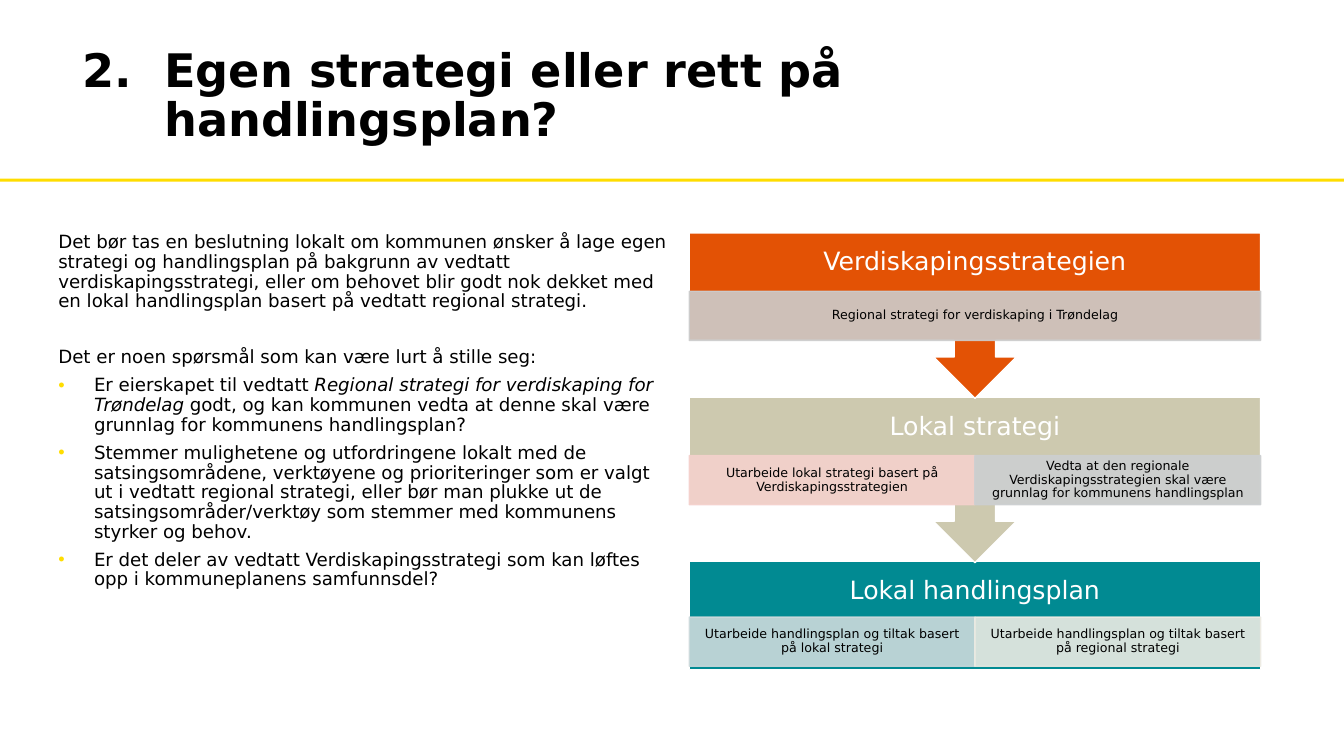
from lxml import etree
from pptx import Presentation
from pptx.dml.color import RGBColor
from pptx.enum.shapes import MSO_SHAPE
from pptx.enum.text import MSO_ANCHOR, PP_ALIGN
from pptx.oxml.ns import qn
from pptx.util import Cm, Pt

RECTANGLE = MSO_SHAPE.RECTANGLE
CALLOUT = MSO_SHAPE.DOWN_ARROW_CALLOUT
MIDDLE = MSO_ANCHOR.MIDDLE
CENTER = PP_ALIGN.CENTER

FONT = "DejaVu Sans"
BLACK = RGBColor(0x00, 0x00, 0x00)
WHITE = RGBColor(0xFF, 0xFF, 0xFF)
YELLOW = RGBColor(0xFF, 0xDD, 0x00)
ORANGE = RGBColor(0xE3, 0x52, 0x05)
SAND = RGBColor(0xCD, 0xC9, 0xAF)
TEAL = RGBColor(0x01, 0x8A, 0x92)
GREY = RGBColor(0xCC, 0xCC, 0xCC)
PINK = RGBColor(0xF4, 0xD1, 0xCC)
COOL_GREY = RGBColor(0xCC, 0xCF, 0xD1)
PALE_BLUE = RGBColor(0xCC, 0xDA, 0xDC)
CREAM = RGBColor(0xED, 0xEB, 0xE3)


def set_type(paragraph, size, color, bold=False):
    paragraph.line_spacing = 0.9
    for run in paragraph.runs:
        run.font.name = FONT
        run.font.size = Pt(size)
        run.font.bold = bold
        run.font.color.rgb = color


def add_panel(kind, left, top, width, height, fill, line, label, size, color):
    """Add a filled, outlined shape with one centred label."""
    panel = slide.shapes.add_shape(kind, left, top, width, height)
    panel.shadow.inherit = False
    panel.fill.solid()
    panel.fill.fore_color.rgb = fill
    panel.line.color.rgb = line
    panel.line.width = Pt(1)
    frame = panel.text_frame
    frame.word_wrap = True
    frame.vertical_anchor = MIDDLE
    frame.margin_left = frame.margin_right = Cm(0.18)
    frame.margin_top = frame.margin_bottom = Cm(0.03)
    frame.text = label
    frame.paragraphs[0].alignment = CENTER
    set_type(frame.paragraphs[0], size, color)
    return panel


prs = Presentation()
prs.slide_width = Cm(33.87)
prs.slide_height = Cm(19.05)
slide = prs.slides.add_slide(prs.slide_layouts[6])

divider = slide.shapes.add_shape(RECTANGLE, 0, Cm(4.5), prs.slide_width, Cm(0.08))
divider.shadow.inherit = False
divider.fill.solid()
divider.fill.fore_color.rgb = YELLOW
divider.line.fill.background()

# Title and body text
title = slide.shapes.add_textbox(Cm(2.08), Cm(0.91), Cm(26.67), Cm(3.07)).text_frame
body = slide.shapes.add_textbox(Cm(1.47), Cm(5.87), Cm(15.44), Cm(11.68)).text_frame
for frame in (title, body):
    frame.word_wrap = True
    frame.margin_left = frame.margin_right = 0
    frame.margin_top = frame.margin_bottom = 0

title.vertical_anchor = MIDDLE
title.text = "Egen strategi eller rett på handlingsplan?"
heading = title.paragraphs[0]
properties = heading._p.get_or_add_pPr()
properties.set("marL", str(Cm(2.06)))
properties.set("indent", str(-Cm(2.06)))
etree.SubElement(properties, qn("a:buFont"), typeface="+mj-lt")
etree.SubElement(properties, qn("a:buAutoNum"), type="arabicPeriod", startAt="2")
set_type(heading, 33, BLACK, bold=True)

# Each paragraph: bulleted or not, then its runs; every second run is italic
paragraphs = [
    (False, ["Det bør tas en beslutning lokalt om kommunen ønsker å lage egen strategi og "
             "handlingsplan på bakgrunn av vedtatt verdiskapingsstrategi, eller om behovet "
             "blir godt nok dekket med en lokal handlingsplan basert på vedtatt regional "
             "strategi."]),
    (False, ["Det er noen spørsmål som kan være lurt å stille seg:"]),
    (True, ["Er eierskapet til vedtatt ",
            "Regional strategi for verdiskaping for Trøndelag ",
            "godt, og kan kommunen vedta at denne skal være grunnlag for kommunens "
            "handlingsplan?"]),
    (True, ["Stemmer mulighetene og utfordringene lokalt med de satsingsområdene, verktøyene "
            "og prioriteringer som er valgt ut i vedtatt regional strategi, eller bør man "
            "plukke ut de satsingsområder/verktøy som stemmer med kommunens styrker og "
            "behov."]),
    (True, ["Er det deler av vedtatt Verdiskapingsstrategi som kan løftes opp i "
            "kommuneplanens samfunnsdel?"]),
]
for number, (bulleted, texts) in enumerate(paragraphs):
    paragraph = body.add_paragraph() if number else body.paragraphs[0]
    if bulleted:
        properties = paragraph._p.get_or_add_pPr()
        properties.set("marL", str(Cm(0.9)))
        properties.set("indent", str(-Cm(0.9)))
        bullet_color = etree.SubElement(properties, qn("a:buClr"))
        etree.SubElement(bullet_color, qn("a:srgbClr"), val=str(YELLOW))
        etree.SubElement(properties, qn("a:buFont"), typeface="Arial")
        etree.SubElement(properties, qn("a:buChar"), char="•")
    for position, text in enumerate(texts):
        run = paragraph.add_run()
        run.text = text
        run.font.italic = position % 2 == 1
    set_type(paragraph, 13, BLACK)
    paragraph.space_after = Pt(6)
body.paragraphs[1].space_before = Pt(20)

# Flow of three stages, drawn from the last so each arrow lies on the stage below
FLOW_LEFT, FLOW_TOP, FLOW_WIDTH = Cm(17.37), Cm(5.87), Cm(14.4)
STAGE_STEP = Cm(4.14)
DETAIL_HEIGHT = Cm(1.24)
stages = [
    ("Verdiskapingsstrategien", CALLOUT, Cm(4.17), ORANGE, Cm(1.47),
     [("Regional strategi for verdiskaping i Trøndelag", GREY)]),
    ("Lokal strategi", CALLOUT, Cm(4.17), SAND, Cm(1.47),
     [("Utarbeide lokal strategi basert på Verdiskapingsstrategien", PINK),
      ("Vedta at den regionale Verdiskapingsstrategien skal være grunnlag for kommunens "
       "handlingsplan", COOL_GREY)]),
    ("Lokal handlingsplan", RECTANGLE, Cm(2.72), TEAL, Cm(1.4),
     [("Utarbeide handlingsplan og tiltak basert på lokal strategi", PALE_BLUE),
      ("Utarbeide handlingsplan og tiltak basert på regional strategi", CREAM)]),
]
for level, (name, kind, height, fill, detail_offset, details) in reversed(
        list(enumerate(stages))):
    top = FLOW_TOP + level * STAGE_STEP
    stage = add_panel(kind, FLOW_LEFT, top, FLOW_WIDTH, height, fill, WHITE,
                      name, 18, WHITE)
    stage.text_frame.margin_bottom = DETAIL_HEIGHT
    detail_width = FLOW_WIDTH // len(details)
    for column, (text, tint) in enumerate(details):
        detail = add_panel(RECTANGLE, FLOW_LEFT + column * detail_width,
                           top + detail_offset, detail_width, DETAIL_HEIGHT,
                           tint, tint, text, 9, BLACK)
        for tint_color in detail._element.spPr.iter(qn("a:srgbClr")):
            etree.SubElement(tint_color, qn("a:alpha"), val="90000")

prs.save("out.pptx")
